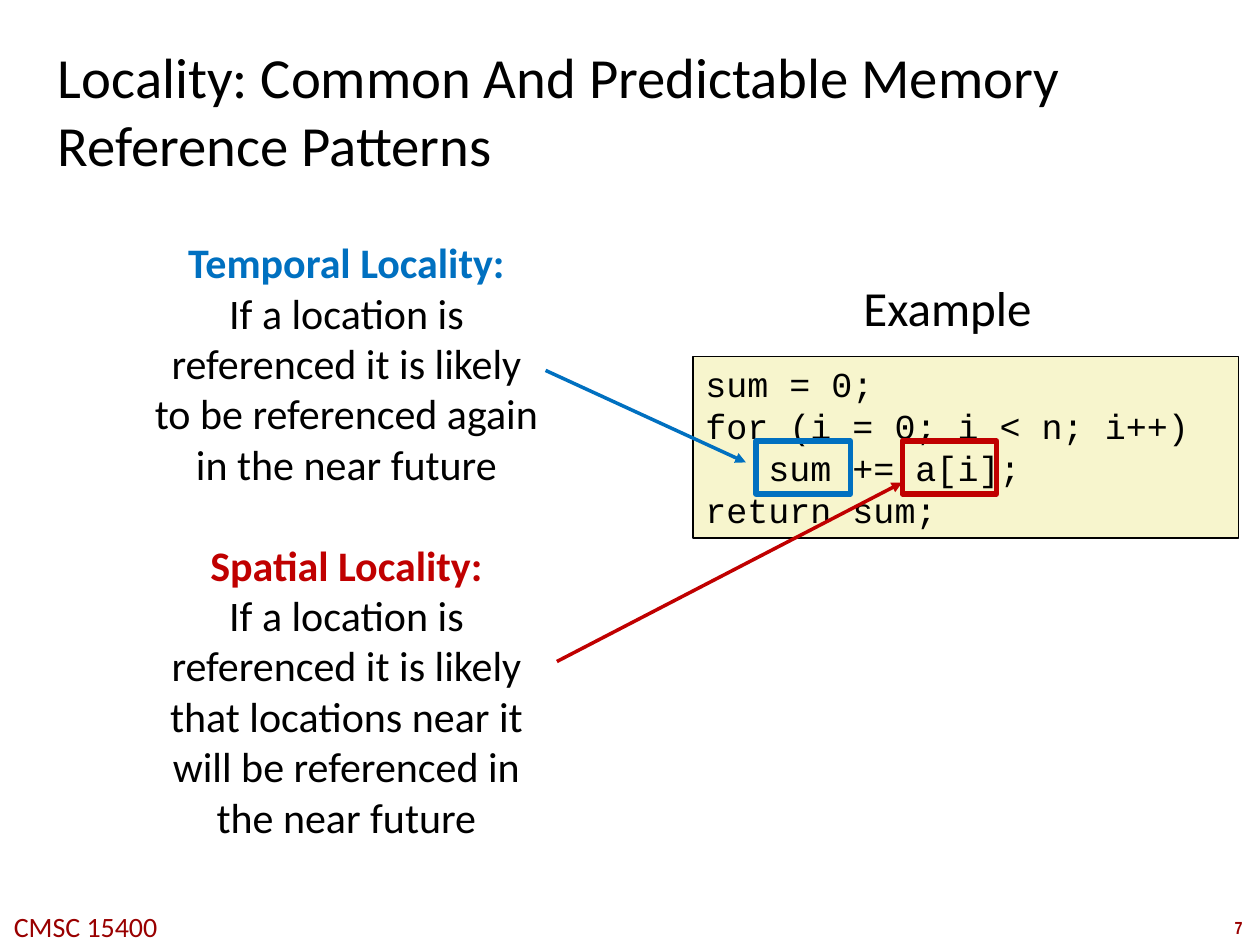
from lxml import etree
from pptx import Presentation
from pptx.dml.color import RGBColor
from pptx.enum.shapes import MSO_CONNECTOR, MSO_SHAPE
from pptx.enum.text import MSO_ANCHOR, MSO_AUTO_SIZE, PP_ALIGN
from pptx.oxml.ns import qn
from pptx.util import Inches, Pt

LEFT, CENTER = PP_ALIGN.LEFT, PP_ALIGN.CENTER
TOP, MIDDLE = MSO_ANCHOR.TOP, MSO_ANCHOR.MIDDLE
NO_FIT, GROW = MSO_AUTO_SIZE.NONE, MSO_AUTO_SIZE.SHAPE_TO_FIT_TEXT
RECTANGLE, STRAIGHT = MSO_SHAPE.RECTANGLE, MSO_CONNECTOR.STRAIGHT
TITLE_ONLY = 5

COLORS = {"text": "000000", "footer": "990000", "temporal": "0070C0",
          "spatial": "C00000", "code": "F7F5CD"}
BODY_FONT, CODE_FONT, NUMBER_FONT = "Calibri", "Courier New", "Arial Narrow"

CODE = ["sum = 0;", "for (i = 0; i < n; i++)", "\tsum += a[i];", "return sum;"]
DEFINITIONS = [
    ("temporal", ["Temporal Locality:", "If a location is",
                  "referenced it is likely", "to be referenced again",
                  "in the near future"]),
    ("spatial", ["Spatial Locality:", "If a location is",
                 "referenced it is likely", "that locations near it",
                 "will be referenced in", "the near future"]),
]
# Accessed term: left edge of its frame, then the arrow's two ends
ACCESSES = {"temporal": (6, (4.33, 2.94), (5.92, 3.67)),
            "spatial": (7.16, (4.42, 5.25), (7.16, 3.83))}


def rgb(name):
    return RGBColor.from_string(COLORS[name])


class SlideBuilder:
    """Holds the current slide and draws elements in its style."""

    def __init__(self, slide):
        self.slide = slide

    def style(self, paragraph, size, color="text", bold=False, font=BODY_FONT,
              align=LEFT):
        paragraph.alignment = align
        for run in paragraph.runs:
            run.font.name = font
            run.font.size = Pt(size)
            run.font.bold = bold
            run.font.color.rgb = rgb(color)

    def title(self, text, box, size):
        title = self.slide.shapes.title
        title.left, title.top, title.width, title.height = map(Inches, box)
        frame = title.text_frame
        frame.text = text
        frame.auto_size = NO_FIT
        frame.word_wrap = True
        frame.vertical_anchor = MIDDLE
        frame.margin_left = frame.margin_right = Inches(0.04)
        frame.margin_top = frame.margin_bottom = Inches(0.04)
        self.style(frame.paragraphs[0], size)

    def text_box(self, box, wrap):
        frame = self.slide.shapes.add_textbox(*map(Inches, box)).text_frame
        frame.word_wrap = wrap
        frame.auto_size = GROW
        return frame

    def label(self, text, box, size, **style):
        frame = self.text_box(box, wrap=False)
        frame.text = text
        self.style(frame.paragraphs[0], size, align=CENTER, **style)

    def definitions(self, groups, box, size):
        """Stack groups of centred lines, each under a coloured heading."""
        frame = self.text_box(box, wrap=True)
        frame.text = "\n".join(line for _, lines in groups for line in lines)
        paragraphs = iter(frame.paragraphs)
        for group, (color, lines) in enumerate(groups):
            heading = next(paragraphs)
            self.style(heading, size, color, bold=True, align=CENTER)
            if group:
                heading.space_before = Pt(size * 1.2)
            for _ in lines[1:]:
                self.style(next(paragraphs), size, align=CENTER)

    def rectangle(self, box, line, width, fill=None):
        shape = self.slide.shapes.add_shape(RECTANGLE, *map(Inches, box))
        shape.shadow.inherit = False
        shape.line.color.rgb = rgb(line)
        shape.line.width = Pt(width)
        if fill:
            shape.fill.solid()
            shape.fill.fore_color.rgb = rgb(fill)
        else:
            shape.fill.background()
        return shape

    def code(self, lines, box, size):
        frame = self.rectangle(box, "text", 1, "code").text_frame
        frame.text = "\n".join(lines)
        frame.word_wrap = True
        frame.auto_size = GROW
        frame.vertical_anchor = TOP
        for paragraph in frame.paragraphs:
            properties = paragraph._p.get_or_add_pPr()
            tabs = etree.SubElement(properties, qn("a:tabLst"))
            etree.SubElement(tabs, qn("a:tab"), pos=str(Inches(0.5)), algn="l")
            self.style(paragraph, size, font=CODE_FONT)

    def arrow(self, start, end, color):
        arrow = self.slide.shapes.add_connector(
            STRAIGHT, *map(Inches, start + end))
        arrow.line.color.rgb = rgb(color)
        arrow.line.width = Pt(2)
        etree.SubElement(arrow.line._get_or_add_ln(), qn("a:tailEnd"),
                         type="triangle")
        etree.SubElement(arrow._element.spPr, qn("a:effectLst"))


def main():
    deck = Presentation()
    deck.slide_width, deck.slide_height = Inches(10), Inches(7.5)
    builder = SlideBuilder(deck.slides.add_slide(deck.slide_layouts[TITLE_ONLY]))

    builder.label("7", (9.66, 7.23, 0.34, 0.27), 10, color="footer", bold=True,
                  font=NUMBER_FONT)
    builder.label("CMSC 15400", (-0.03, 7.17, 1.42, 0.37), 16, color="footer")
    builder.title("Locality: Common And Predictable Memory Reference Patterns",
                  (0.42, 0.28, 9.17, 1.19), 32.4)
    builder.definitions(DEFINITIONS, (0, 1.83, 5.5, 4.95), 24)
    builder.code(CODE, (5.5, 2.83, 4.33, 1.44), 20)
    builder.label("Example", (6.75, 2.15, 1.54, 0.57), 28)
    for color, (left, start, end) in ACCESSES.items():
        builder.rectangle((left, 3.5, 0.75, 0.42), color, 3)
        builder.arrow(start, end, color)

    deck.save("out.pptx")


if __name__ == "__main__":
    main()
